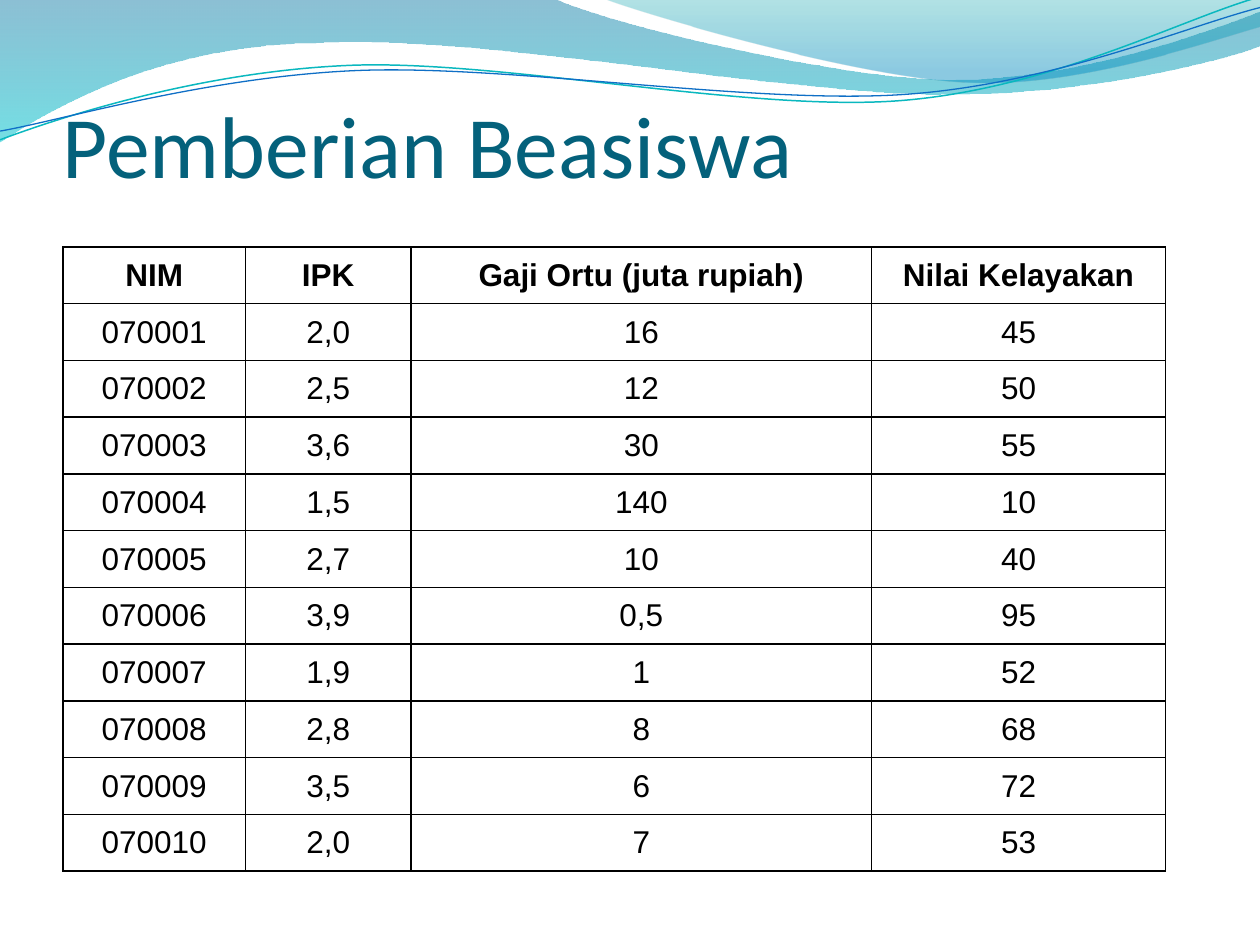
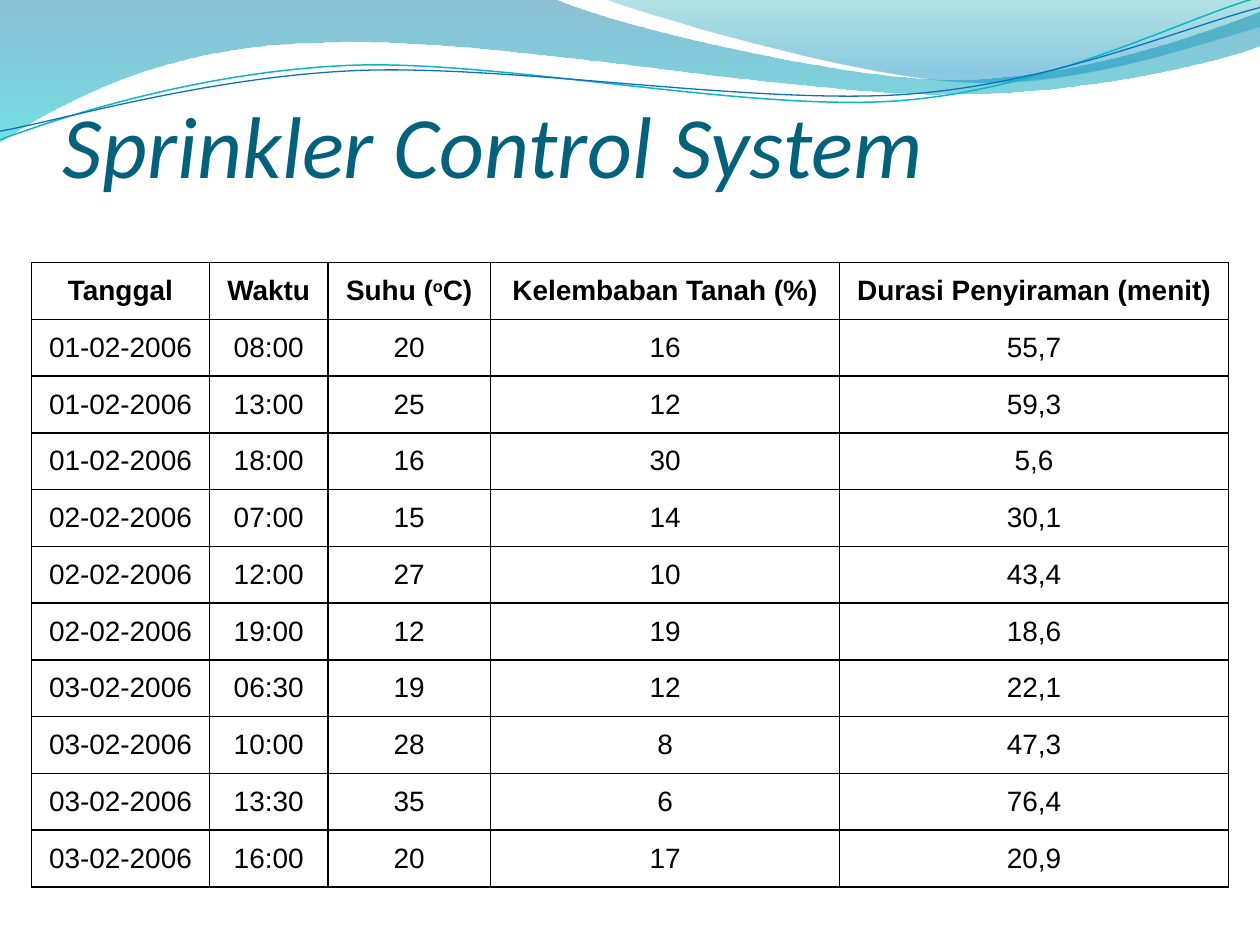
import lxml.etree
import pptx
import pptx.dml.color
import pptx.enum.text
import pptx.oxml.ns
import pptx.shapes.shapetree
import pptx.util

Pt = pptx.util.Pt
RGB = pptx.dml.color.RGBColor
qn = pptx.oxml.ns.qn

WHITE = RGB(0xFF, 0xFF, 0xFF)
BLACK = RGB(0x00, 0x00, 0x00)
TITLE_TEAL = RGB(0x04, 0x61, 0x7B)
BAND_BLUE = RGB(0x00, 0x74, 0xA1)
BAND_CYAN = RGB(0x00, 0xC6, 0xCF)
CREST_TEAL = RGB(0x00, 0xA1, 0xA9)
CREST_BLUE = RGB(0x00, 0x8B, 0xBF)
LINE_TEAL = RGB(0x0A, 0xB8, 0xBF)
LINE_BLUE = RGB(0x0F, 0x6F, 0xC6)

TITLE_FONT = "Calibri"
TABLE_FONT = "Arial"
ROW_HEIGHT = 32.43
HANGING_INDENT = 27

# Outlines in points: a start, then segments of one point (straight) or three (Bézier)
BAND = [(0, -0.7), [(316.8, -0.7)],
        [(342.7, 12.2), (478.1, 45.4), (545.8, 45.4)],
        [(614.2, 45.4), (689.8, 18.7), (720, 6.5)],
        [(720.7, 25.9)],
        [(707.8, 31.7), (626.4, 54.7), (537.1, 54)],
        [(447.8, 54), (275, 20.2), (185, 24.5)],
        [(92.9, 25.2), (33.1, 59.8), (-0.7, 81.4)],
        [(0, -0.7)]]
CREST = [(344.9, -0.7),
         [(366.5, 7.9), (491, 44.6), (553.7, 46.8)],
         [(616.3, 49.7), (691.9, 23), (720, 15.1)],
         [(720, 0)],
         [(344.9, -0.7)]]
UPPER_LINE = [(0, 79.9),
              [(34.6, 67), (113.8, 41), (199.4, 37.4)],
              [(284.4, 33.8), (427, 64.1), (513.4, 57.6)],
              [(599.8, 51.1), (675.4, 10.8), (718.6, -1.4)]]
LOWER_LINE = [(0, 74.9),
              [(33.8, 69.1), (118.1, 43.9), (203.8, 40.3)],
              [(290.2, 36.7), (429.8, 59.8), (516.2, 54)],
              [(601.9, 48.2), (677.5, 15.1), (720, 4.3)]]

# Text between ^ marks is superscript
SCHOLARSHIP = [
    ("NIM", "IPK", "Gaji Ortu (juta rupiah)", "Nilai Kelayakan"),
    ("070001", "2,0", "16", "45"),
    ("070002", "2,5", "12", "50"),
    ("070003", "3,6", "30", "55"),
    ("070004", "1,5", "140", "10"),
    ("070005", "2,7", "10", "40"),
    ("070006", "3,9", "0,5", "95"),
    ("070007", "1,9", "1", "52"),
    ("070008", "2,8", "8", "68"),
    ("070009", "3,5", "6", "72"),
    ("070010", "2,0", "7", "53"),
]
SPRINKLER = [
    ("Tanggal", "Waktu", "Suhu (^o^C)", "Kelembaban Tanah (%)", "Durasi Penyiraman (menit)"),
    ("01-02-2006", "08:00", "20", "16", "55,7"),
    ("01-02-2006", "13:00", "25", "12", "59,3"),
    ("01-02-2006", "18:00", "16", "30", "5,6"),
    ("02-02-2006", "07:00", "15", "14", "30,1"),
    ("02-02-2006", "12:00", "27", "10", "43,4"),
    ("02-02-2006", "19:00", "12", "19", "18,6"),
    ("03-02-2006", "06:30", "19", "12", "22,1"),
    ("03-02-2006", "10:00", "28", "8", "47,3"),
    ("03-02-2006", "13:30", "35", "6", "76,4"),
    ("03-02-2006", "16:00", "20", "17", "20,9"),
]


class Deck:
    def __init__(self):
        self.presentation = pptx.Presentation()
        self.presentation.slide_width = Pt(720)
        self.presentation.slide_height = Pt(540)
        self.layout = self.presentation.slide_layouts[6]
        self.slide = None
        # Waves along the top, shared by all slides through the layout
        self.backdrop = pptx.shapes.shapetree.SlideShapes(
            self.layout.shapes._spTree, self.layout)
        self.wave_area(BAND, [(0, BAND_BLUE, 45), (1, BAND_CYAN, 55)])
        self.wave_area(CREST, [(0, CREST_TEAL, 30), (0.8, CREST_BLUE, 45)])
        self.wave_line(UPPER_LINE, LINE_TEAL, 0.85)
        self.wave_line(LOWER_LINE, LINE_BLUE, 0.75)

    def new_slide(self, title, italic=False):
        self.slide = self.presentation.slides.add_slide(self.layout)
        self.title(title, italic)

    def outline(self, outline, close):
        (left, top), *segments = outline
        builder = self.backdrop.build_freeform(Pt(left), Pt(top))
        points = [(Pt(x), Pt(y)) for segment in segments for x, y in segment]
        builder.add_line_segments(points, close=close)
        wave = builder.convert_to_shape()
        wave.shadow.inherit = False
        # Join each three points of a curved segment into one Bézier
        steps = iter(list(wave._element.iter(qn("a:lnTo"))))
        for segment in segments:
            first, *others = [next(steps) for _ in segment]
            if others:
                first.tag = qn("a:cubicBezTo")
                for step in others:
                    first.append(step[0])
                    step.getparent().remove(step)
        return wave

    def wave_area(self, outline, stops):
        wave = self.outline(outline, close=True)
        wave.line.fill.background()
        wave.fill.gradient()
        wave.fill.gradient_angle = 270
        for stop, (position, color, _) in zip(wave.fill.gradient_stops, stops):
            stop.position = position
            stop.color.rgb = color
        colors = wave._element.spPr.iter(qn("a:srgbClr"))
        for color, (_, _, opacity) in zip(colors, stops):
            lxml.etree.SubElement(color, qn("a:alpha"), val=str(opacity * 1000))

    def wave_line(self, outline, color, width):
        wave = self.outline(outline, close=False)
        wave.fill.background()
        wave.line.color.rgb = color
        wave.line.width = Pt(width)

    def style(self, paragraph, font, size, color, bold=False, italic=False):
        paragraph.font.name = font
        paragraph.font.size = Pt(size)
        paragraph.font.color.rgb = color
        paragraph.font.bold = bold
        paragraph.font.italic = italic

    def title(self, text, italic):
        frame = self.slide.shapes.add_textbox(Pt(36), Pt(22), Pt(648), Pt(90)).text_frame
        frame.word_wrap = True
        frame.vertical_anchor = pptx.enum.text.MSO_ANCHOR.BOTTOM
        frame.margin_left = frame.margin_right = frame.margin_bottom = 0
        frame.margin_top = Pt(3.6)
        frame.text = text
        self.style(frame.paragraphs[0], TITLE_FONT, 50, TITLE_TEAL, italic=italic)

    def table(self, left, top, widths, rows, size):
        table = self.slide.shapes.add_table(
            len(rows), len(widths), Pt(left), Pt(top),
            Pt(sum(widths)), Pt(ROW_HEIGHT * len(rows))).table
        table.first_row = table.horz_banding = False
        for column, width in zip(table.columns, widths):
            column.width = Pt(width)
        for r, row in enumerate(rows):
            table.rows[r].height = Pt(ROW_HEIGHT)
            for c, text in enumerate(row):
                self.cell(table.cell(r, c), text, size, bold=r == 0)

    def cell(self, cell, text, size, bold):
        self.borders(cell)
        cell.fill.solid()
        cell.fill.fore_color.rgb = WHITE
        cell.vertical_anchor = pptx.enum.text.MSO_ANCHOR.MIDDLE
        paragraph = cell.text_frame.paragraphs[0]
        paragraph.alignment = pptx.enum.text.PP_ALIGN.CENTER
        properties = paragraph._p.get_or_add_pPr()
        properties.set("marL", str(Pt(HANGING_INDENT)))
        properties.set("indent", str(-Pt(HANGING_INDENT)))
        self.style(paragraph, TABLE_FONT, size, BLACK, bold)
        for index, part in enumerate(text.split("^")):
            run = paragraph.add_run()
            run.text = part
            if index % 2:
                run.font._element.set("baseline", "30000")

    def borders(self, cell):
        properties = cell._tc.get_or_add_tcPr()
        for side in ("a:lnL", "a:lnR", "a:lnT", "a:lnB"):
            line = lxml.etree.SubElement(properties, qn(side), w=str(Pt(1)))
            fill = lxml.etree.SubElement(line, qn("a:solidFill"))
            lxml.etree.SubElement(fill, qn("a:srgbClr"), val=str(BLACK))


def main():
    deck = Deck()

    # Scholarship awards
    deck.new_slide("Pemberian Beasiswa")
    deck.table(36, 141.1, [104.2, 94.7, 263.2, 167.9], SCHOLARSHIP, 18)

    # Sprinkler control
    deck.new_slide("Sprinkler Control System", italic=True)
    deck.table(18, 150, [101.7, 67.7, 92.9, 199.6, 222.1], SPRINKLER, 16)

    deck.presentation.save("out.pptx")


if __name__ == "__main__":
    main()
